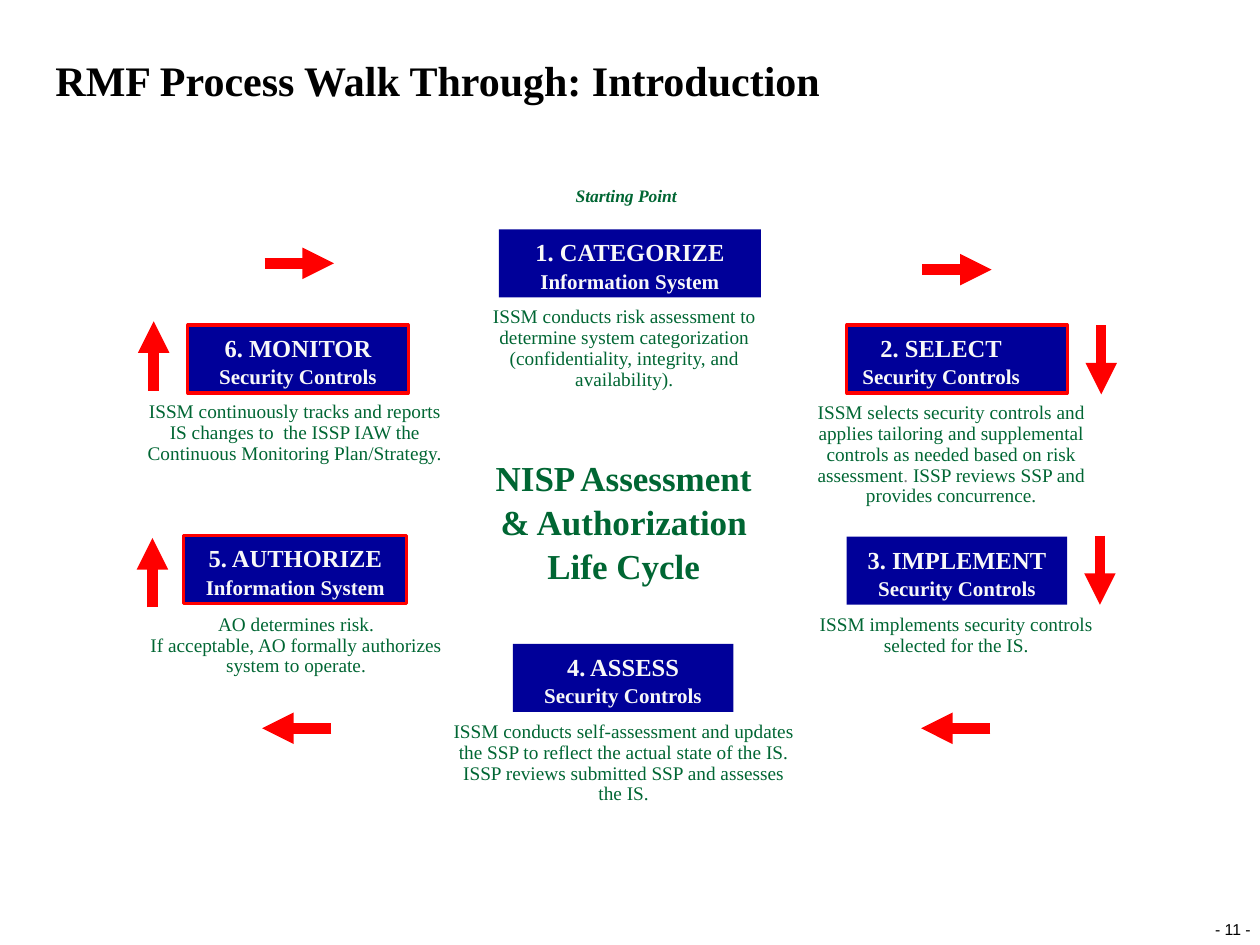
from dataclasses import dataclass

from lxml import etree
from pptx import Presentation
from pptx.dml.color import RGBColor
from pptx.enum import shapes, text
from pptx.oxml import ns
from pptx.util import Inches, Pt


@dataclass(frozen=True)
class Theme:
    serif: str = "Times New Roman"
    sans: str = "Arial"
    black: str = "000000"
    green: str = "006633"
    grey: str = "808080"
    navy: str = "000099"
    red: str = "FF0000"
    pale: str = "F8F8F8"
    title: int = 24
    heading: int = 20
    step: int = 14
    target: int = 12
    caption: int = 11
    start: int = 10
    number: int = 9
    spacing: float = 1.06
    tight: float = 0.9


THEME = Theme()

# name, target, (left, top, width), outlined, right indent of the name
STEPS = [
    ("1. CATEGORIZE", "Information System", (3.96, 1.82, 2.08), False, 0),
    ("2. SELECT", "Security Controls", (6.72, 2.58, 1.75), True, 0.25),
    ("3. IMPLEMENT", "Security Controls", (6.72, 4.26, 1.75), False, 0),
    ("4. ASSESS", "Security Controls", (4.07, 5.11, 1.75), False, 0),
    ("5. AUTHORIZE", "Information System", (1.46, 4.25, 1.77), True, 0),
    ("6. MONITOR", "Security Controls", (1.49, 2.58, 1.75), True, 0),
]

# (left, top, width, height), paragraphs of (words, colour) runs
CAPTIONS = [
    ((3.73, 2.39, 2.45, 0.77), [[(
        "ISSM conducts risk assessment to determine system categorization "
        "(confidentiality, integrity, and availability).", THEME.green)]]),
    ((6.23, 3.15, 2.64, 0.95), [[
        ("ISSM selects security controls and applies tailoring and supplemental "
         "controls as needed based on risk assessment", THEME.green),
        (". ", THEME.grey),
        ("ISSP reviews SSP and provides concurrence.", THEME.green)]]),
    ((6.21, 4.83, 2.76, 0.43), [[(
        "ISSM implements security controls selected for the IS.", THEME.green)]]),
    ((3.47, 5.68, 2.96, 0.77), [[(
        "ISSM conducts self-assessment and updates the SSP to reflect the actual "
        "state of the IS. ISSP reviews submitted SSP and assesses the IS.",
        THEME.green)]]),
    ((0.98, 4.83, 2.74, 0.6), [
        [("AO determines risk.", THEME.green)],
        [("If acceptable, AO formally authorizes system to operate.", THEME.green)]]),
    ((1, 3.14, 2.68, 0.6), [[(
        "ISSM continuously tracks and reports IS changes to  the ISSP IAW the "
        "Continuous Monitoring Plan/Strategy.", THEME.green)]]),
]

ARROW_LENGTH = 0.55
# start x, start y, direction x, direction y
ARROWS = [
    (2.1, 2.09, 1, 0), (7.32, 2.14, 1, 0),
    (8.74, 2.58, 0, 1), (8.73, 4.25, 0, 1),
    (7.86, 5.78, -1, 0), (2.63, 5.78, -1, 0),
    (1.21, 4.82, 0, -1), (1.22, 3.1, 0, -1),
]


def colour(code):
    return RGBColor.from_string(code)


def add_span(para, words, size, code, bold=False, italic=False, font=THEME.serif):
    span = para.add_run()
    span.text = words
    span.font.name = font
    span.font.size = Pt(size)
    span.font.bold = bold
    span.font.italic = italic
    span.font.color.rgb = colour(code)


def add_paras(frame, count, spacing):
    """Return count centred paragraphs of an empty text frame."""
    frame.word_wrap = True
    frame.vertical_anchor = text.MSO_ANCHOR.TOP
    paras = [frame.paragraphs[0]] + [frame.add_paragraph() for _ in range(count - 1)]
    for para in paras:
        para.alignment = text.PP_ALIGN.CENTER
        para.line_spacing = spacing
    return paras


def clear_insets(frame):
    frame.margin_left = frame.margin_right = 0
    frame.margin_top = frame.margin_bottom = 0


def place(box, left, top, width, height):
    box.left, box.top = Inches(left), Inches(top)
    box.width, box.height = Inches(width), Inches(height)


def add_title(page, words):
    box = page.shapes.title
    place(box, 0.44, 0.48, 8.22, 0.36)
    frame = box.text_frame
    clear_insets(frame)
    frame.word_wrap = True
    frame.auto_size = text.MSO_AUTO_SIZE.NONE
    frame.vertical_anchor = text.MSO_ANCHOR.BOTTOM
    para = frame.paragraphs[0]
    para.alignment = text.PP_ALIGN.LEFT
    para.line_spacing = THEME.tight
    add_span(para, words, THEME.title, THEME.black, bold=True)


def add_label(page, area, words, size, italic=False):
    box = page.shapes.add_textbox(*map(Inches, area))
    para = add_paras(box.text_frame, 1, THEME.spacing)[0]
    add_span(para, words, size, THEME.green, bold=True, italic=italic)


def add_caption(page, area, lines):
    box = page.shapes.add_textbox(*map(Inches, area))
    for para, spans in zip(add_paras(box.text_frame, len(lines), THEME.tight), lines):
        for words, code in spans:
            add_span(para, words, THEME.caption, code)


def add_step(page, name, target, spot, outlined, indent):
    box = page.shapes.add_shape(shapes.MSO_SHAPE.RECTANGLE, *map(Inches, (*spot, 0.54)))
    box.shadow.inherit = False
    box.fill.solid()
    box.fill.fore_color.rgb = colour(THEME.navy)
    if outlined:
        box.line.color.rgb = colour(THEME.red)
        box.line.width = Pt(1.75)
    else:
        box.line.fill.background()
    top, bottom = add_paras(box.text_frame, 2, THEME.spacing)
    if indent:
        top._p.get_or_add_pPr().set("marR", str(Inches(indent)))
    add_span(top, name, THEME.step, THEME.pale, bold=True)
    add_span(bottom, target, THEME.target, THEME.pale, bold=True)


def add_arrow(page, x, y, across, down):
    ends = (x, y, x + across * ARROW_LENGTH, y + down * ARROW_LENGTH)
    arrow = page.shapes.add_connector(shapes.MSO_CONNECTOR.STRAIGHT, *map(Inches, ends))
    arrow.line.color.rgb = colour(THEME.red)
    arrow.line.width = Pt(6)
    etree.SubElement(arrow.line._get_or_add_ln(), ns.qn("a:tailEnd"), type="triangle")
    etree.SubElement(arrow._element.spPr, ns.qn("a:effectLst"))


def add_page_number(page, words):
    box = page.shapes.add_textbox(*map(Inches, (9.63, 7.29, 0.31, 0.16)))
    frame = box.text_frame
    para = add_paras(frame, 1, THEME.spacing)[0]
    clear_insets(frame)
    frame.word_wrap = False
    frame.vertical_anchor = text.MSO_ANCHOR.BOTTOM
    add_span(para, words, THEME.number, THEME.black, font=THEME.sans)


def main():
    deck = Presentation()
    deck.slide_width, deck.slide_height = Inches(10), Inches(7.5)
    page = deck.slides.add_slide(deck.slide_layouts.get_by_name("Title Only"))
    add_title(page, "RMF Process Walk Through: Introduction")
    add_label(page, (3.69, 3.55, 2.52, 1.11),
              "NISP Assessment & Authorization Life Cycle", THEME.heading)
    add_label(page, (4.26, 1.41, 1.42, 0.27), "Starting Point", THEME.start, italic=True)
    for caption in CAPTIONS:
        add_caption(page, *caption)
    for step in STEPS:
        add_step(page, *step)
    for arrow in ARROWS:
        add_arrow(page, *arrow)
    add_page_number(page, "- 11 -")
    deck.save("out.pptx")


if __name__ == "__main__":
    main()
